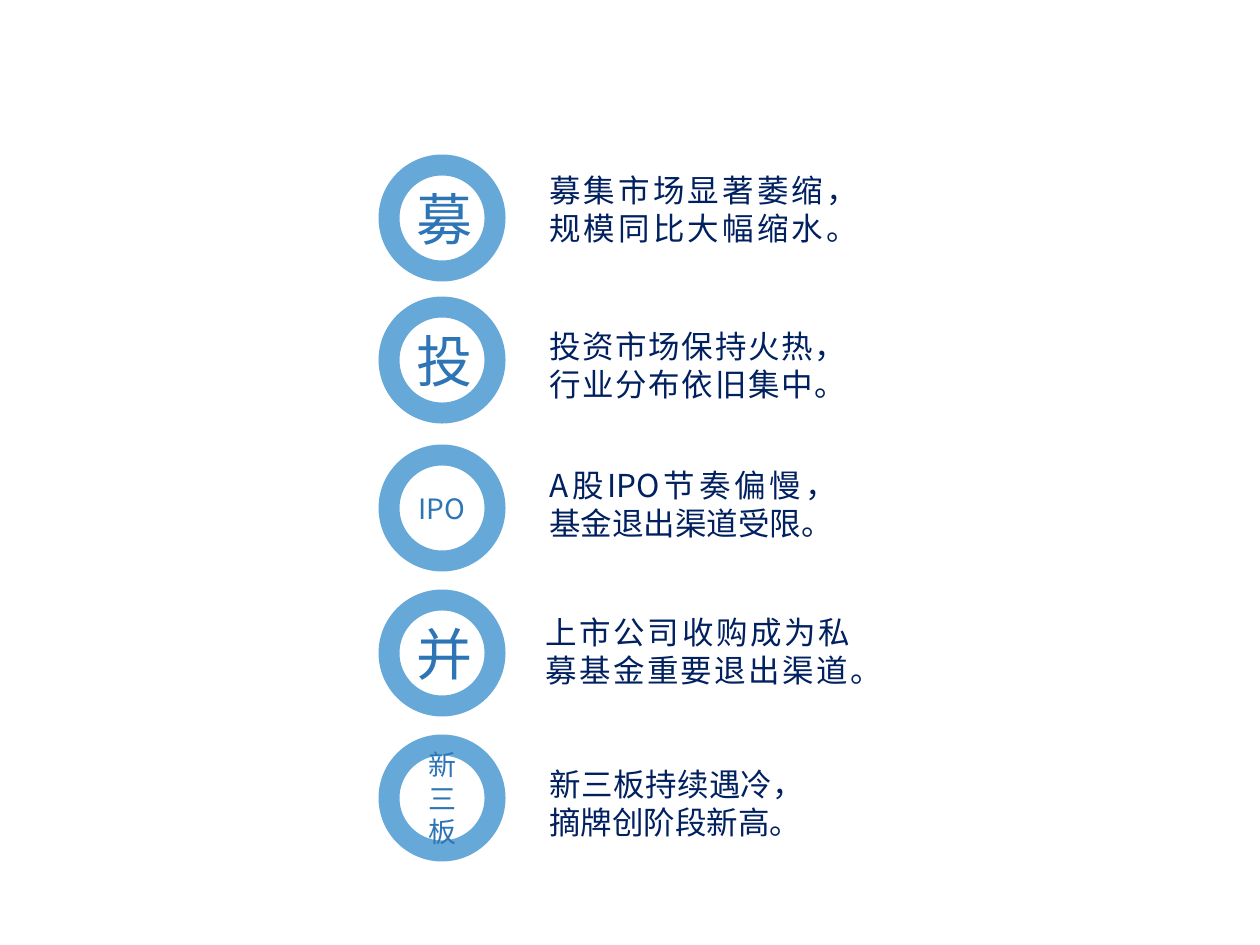
from dataclasses import dataclass

from lxml.etree import SubElement as Sub
from pptx import Presentation
from pptx.dml.color import RGBColor as Rgb
from pptx.enum.shapes import MSO_SHAPE as Shape
from pptx.enum.text import MSO_ANCHOR as Anchor, MSO_AUTO_SIZE as Fit, PP_ALIGN as Align
from pptx.oxml.ns import qn
from pptx.util import Pt


@dataclass(frozen=True)
class Theme:
    ring: Rgb = Rgb(0x00, 0x70, 0xC0)
    mark: Rgb = Rgb(0x2E, 0x75, 0xB6)
    ink: Rgb = Rgb(0x00, 0x20, 0x60)
    alpha: int = 60
    edge: int = 12
    big: int = 32
    small: int = 16
    body: int = 18
    mark_face: str = "Noto Sans CJK JP"
    body_face: str = "Noto Sans CJK SC"


THEME = Theme()
LEFT = 389
RING = 106
NOTE_H = 89

ROWS = [
    (165, "募", "募集市场显著萎缩，规模同比大幅缩水。", (148, 0, 302)),
    (307, "投", "投资市场保持火热，行业分布依旧集中。", (148, 14, 290)),
    (455, "IPO", "A股IPO节奏偏慢，基金退出渠道受限。", (148, 5, 312)),
    (600, "并", "上市公司收购成为私募基金重要退出渠道。", (144, 7, 330)),
    (745, "新三板", "新三板持续遇冷，摘牌创阶段新高。", (148, 14, 280)),
]


def px(n):
    return round(n * 914400 / 126)


def write(frame, text, size, face, color, align):
    frame.word_wrap = True
    para = frame.paragraphs[0]
    para.text = text
    para.alignment = align
    font = para.font
    font.size = Pt(size)
    font.name = face
    font.color.rgb = color
    props = para._p.pPr.find(qn("a:defRPr"))
    props.set("lang", "zh-CN")
    Sub(props, qn("a:ea")).set("typeface", face)


def add_ring(slide, x, y, text):
    ring = slide.shapes.add_shape(Shape.OVAL, px(x), px(y), px(RING), px(RING))
    ring.shadow.inherit = False
    ring.fill.background()
    ring.line.width = Pt(THEME.edge)
    ring.line.color.rgb = THEME.ring
    tint = ring.line._ln.find(".//" + qn("a:srgbClr"))
    Sub(tint, qn("a:alpha")).set("val", str(THEME.alpha * 1000))
    ring.text_frame.vertical_anchor = Anchor.MIDDLE
    size = THEME.big if len(text) == 1 else THEME.small
    write(ring.text_frame, text, size, THEME.mark_face, THEME.mark, Align.CENTER)


def add_note(slide, x, y, width, text):
    note = slide.shapes.add_textbox(px(x), px(y), px(width), px(NOTE_H))
    note.text_frame.auto_size = Fit.SHAPE_TO_FIT_TEXT
    write(note.text_frame, text, THEME.body, THEME.body_face, THEME.ink, Align.JUSTIFY)


def add_row(slide, x, y, mark, text, place):
    dx, dy, width = place
    add_ring(slide, x, y, mark)
    add_note(slide, x + dx, y + dy, width, text)


def main():
    deck = Presentation()
    deck.slide_width, deck.slide_height = px(1260), px(945)
    slide = deck.slides.add_slide(deck.slide_layouts[6])
    for top, mark, text, place in ROWS:
        add_row(slide, LEFT, top, mark, text, place)
    deck.save("out.pptx")


if __name__ == "__main__":
    main()
